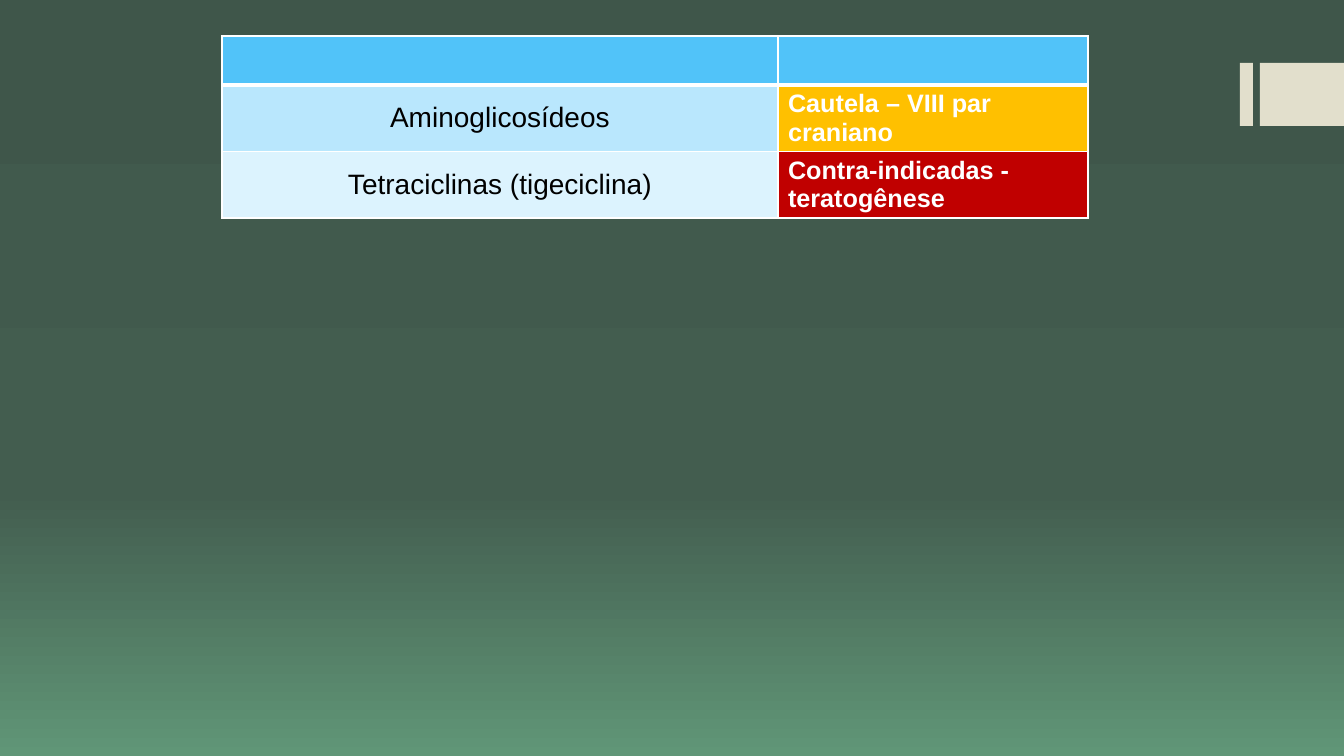
from copy import deepcopy

from lxml import etree
from pptx import Presentation
from pptx.dml.color import RGBColor
from pptx.enum.shapes import MSO_SHAPE
from pptx.enum.text import MSO_ANCHOR, PP_ALIGN
from pptx.oxml.ns import qn
from pptx.util import Emu, Pt

RECTANGLE = MSO_SHAPE.RECTANGLE
MIDDLE = MSO_ANCHOR.MIDDLE
LEFT, CENTER = PP_ALIGN.LEFT, PP_ALIGN.CENTER

SLIDE_WIDTH, SLIDE_HEIGHT = 1344, 756
BACKDROP = [(0, "3F564A"), (0.65, "435D4F"), (1, "609677")]
SAND, WHITE, BLACK = "E2DFCC", "FFFFFF", "000000"
HEADER_BLUE = "51C3F9"
COLUMN_WIDTHS = [556, 310]
HEADER_HEIGHT, DRUG_HEIGHT = 49, 66
DRUGS = [
    ("Aminoglicosídeos", "B9E7FD", "Cautela – VIII par craniano", "FFC000"),
    ("Tetraciclinas (tigeciclina)", "DCF3FE", "Contra-indicadas - teratogênese", "C00000"),
]


def px(length):
    """Turn a length in pixels into EMU."""
    return Emu(round(length * 914400 / 100.8))


def color(hex_code):
    """Turn a hex string into a colour."""
    return RGBColor.from_string(hex_code)


def paint_backdrop(slide):
    """Fill the slide background with a gradient from top to bottom."""
    fill = slide.background.fill
    fill.gradient()
    fill.gradient_angle = 270
    last_stop = fill.gradient_stops[-1]._gs
    last_stop.addnext(deepcopy(last_stop))
    for stop, (position, hex_code) in zip(fill.gradient_stops, BACKDROP):
        stop.position = position
        stop.color.rgb = color(hex_code)


def add_bar(slide, left, top, width, height):
    """Draw a plain sand-coloured bar."""
    bar = slide.shapes.add_shape(RECTANGLE, px(left), px(top), px(width), px(height))
    bar.shadow.inherit = False
    bar.fill.solid()
    bar.fill.fore_color.rgb = color(SAND)
    bar.line.fill.background()


def write(cell, text, size=18, hex_code=BLACK, bold=False, align=LEFT):
    """Write formatted text in the middle of a cell."""
    cell.vertical_anchor = MIDDLE
    paragraph = cell.text_frame.paragraphs[0]
    paragraph.alignment = align
    run = paragraph.add_run()
    run.text = text
    run.font.name = "Arial"
    run.font.size = Pt(size)
    run.font.bold = bold
    run.font.color.rgb = color(hex_code)


def style_cell(cell, hex_code, bottom=1):
    """Give a cell white borders and a solid fill."""
    properties = cell._tc.get_or_add_tcPr()
    for side, points in (("L", 1), ("R", 1), ("T", 1), ("B", bottom)):
        border = etree.SubElement(properties, qn(f"a:ln{side}"), w=str(Pt(points)))
        border_fill = etree.SubElement(border, qn("a:solidFill"))
        etree.SubElement(border_fill, qn("a:srgbClr"), val=WHITE)
    cell.fill.solid()
    cell.fill.fore_color.rgb = color(hex_code)


def add_drug_table(slide, left, top):
    """Build the table of drugs and their warnings."""
    heights = [HEADER_HEIGHT] + [DRUG_HEIGHT] * len(DRUGS)
    table = slide.shapes.add_table(
        len(heights), len(COLUMN_WIDTHS), px(left), px(top),
        px(sum(COLUMN_WIDTHS)), px(sum(heights)),
    ).table
    for column, width in zip(table.columns, COLUMN_WIDTHS):
        column.width = px(width)
    for row, height in zip(table.rows, heights):
        row.height = px(height)
    for header in table.rows[0].cells:
        style_cell(header, HEADER_BLUE, bottom=3)
    for index, (drug, drug_fill, warning, warning_fill) in enumerate(DRUGS, 1):
        drug_cell, warning_cell = table.cell(index, 0), table.cell(index, 1)
        style_cell(drug_cell, drug_fill)
        write(drug_cell, drug, size=20, align=CENTER)
        style_cell(warning_cell, warning_fill)
        write(warning_cell, warning, hex_code=WHITE, bold=True)


def main():
    """Build the slide and save it."""
    deck = Presentation()
    deck.slide_width, deck.slide_height = px(SLIDE_WIDTH), px(SLIDE_HEIGHT)
    slide = deck.slides.add_slide(deck.slide_layouts[6])
    paint_backdrop(slide)
    for left, width in ((1240, 13), (1260, 84)):
        add_bar(slide, left, 63, width, 63)
    add_drug_table(slide, 222, 36)
    deck.save("out.pptx")


if __name__ == "__main__":
    main()
